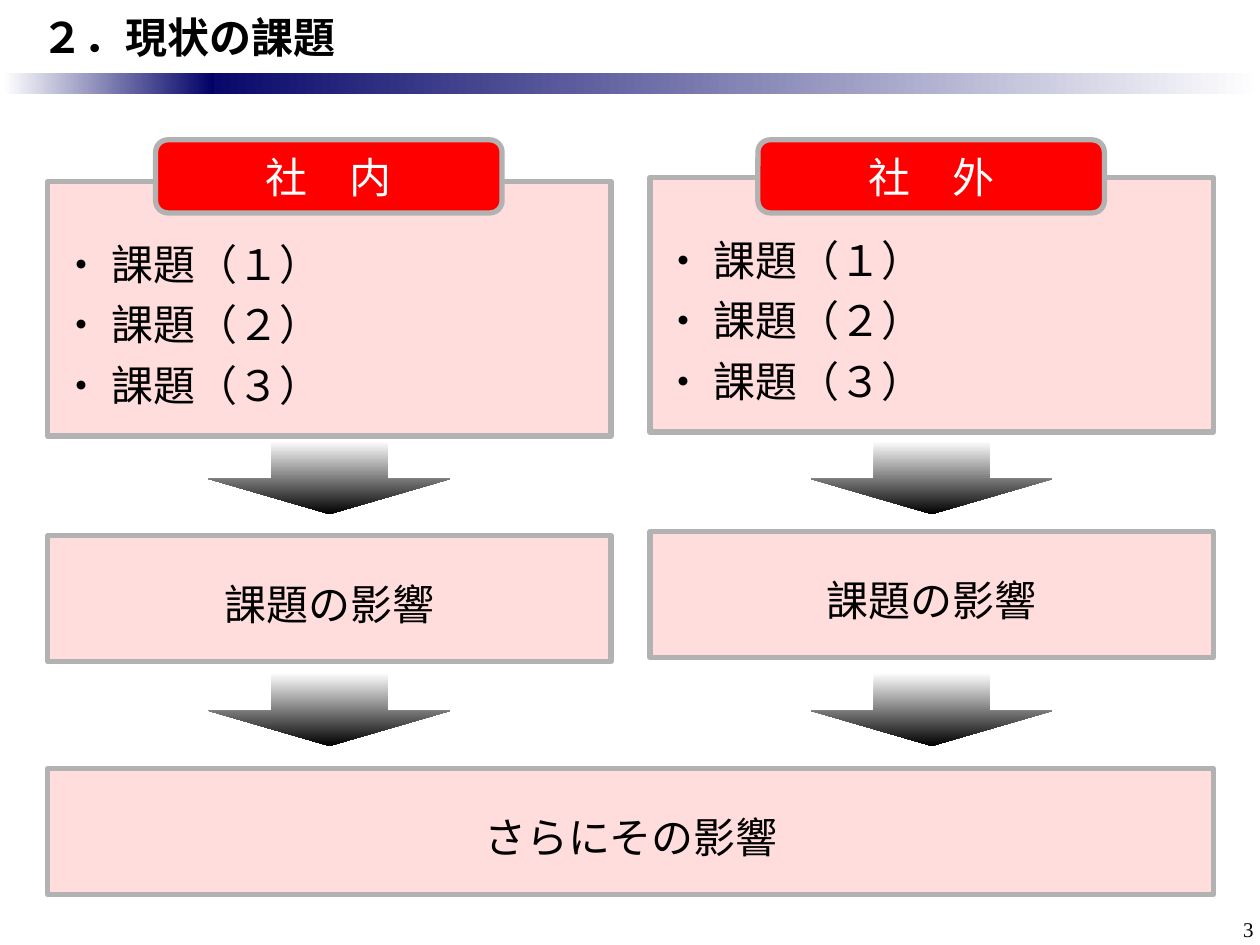
from lxml import etree
from pptx import Presentation
from pptx.dml.color import RGBColor
from pptx.enum.shapes import MSO_SHAPE
from pptx.enum.text import MSO_ANCHOR, PP_ALIGN
from pptx.oxml.ns import qn
from pptx.util import Inches, Pt

RECT = MSO_SHAPE.RECTANGLE
ROUND = MSO_SHAPE.ROUNDED_RECTANGLE
ARROW = MSO_SHAPE.RIGHT_ARROW
TOP, MIDDLE = MSO_ANCHOR.TOP, MSO_ANCHOR.MIDDLE
LEFT, CENTER, RIGHT = PP_ALIGN.LEFT, PP_ALIGN.CENTER, PP_ALIGN.RIGHT
GOTHIC, SERIF = "Noto Sans CJK JP", "Times New Roman"
PINK, RED, GRAY = "FFDDDD", "FF0000", "B2B2B2"
NAVY, WHITE, BLACK = "000066", "FFFFFF", "000000"
WIDE, TALL = 4.47, 2.02


def tint(color, code):
    """Set a colour from a hex string."""
    color.rgb = RGBColor.from_string(code)


def write(shape, text, align=CENTER, anchor=MIDDLE, inset=(0.1, 0.05, 0.1, 0.05),
          size=24, font=GOTHIC, code=BLACK, bold=False, space=1.0):
    """Put formatted text into a shape."""
    frame = shape.text_frame
    frame.text = text
    frame.word_wrap = True
    frame.vertical_anchor = anchor
    (frame.margin_left, frame.margin_top,
     frame.margin_right, frame.margin_bottom) = map(Inches, inset)
    for para in frame.paragraphs:
        para.alignment = align
        para.line_spacing = space
        para.space_before = Pt(0)
        for run in para.runs:
            run.font.size = Pt(size)
            run.font.name = font
            run.font.bold = bold
            tint(run.font.color, code)
            east = etree.SubElement(run.font._element, qn("a:ea"))
            east.set("typeface", font)


def draw(slide, kind, box):
    """Add a plain preset shape in a box."""
    shape = slide.shapes.add_shape(kind, *map(Inches, box))
    shape.shadow.inherit = False
    return shape


def panel(slide, box, text, kind=RECT, fill=PINK, **style):
    """Add a filled, gray-edged box with text."""
    shape = draw(slide, kind, box)
    shape.fill.solid()
    tint(shape.fill.fore_color, fill)
    tint(shape.line.color, GRAY)
    shape.line.width = Pt(3)
    write(shape, text, **style)


def fade(slide, kind, box, start, end):
    """Add an edgeless shape with a gradient along its length."""
    shape = draw(slide, kind, box)
    shape.line.fill.background()
    shape.fill.gradient()
    shape.fill.gradient_angle = 0
    for stop, code in zip(shape.fill.gradient_stops, (start, end)):
        tint(stop.color, code)
    return shape


def arrow(slide, mid, top):
    """Add a broad arrow pointing down from a top centre point."""
    long, broad = 0.58, 1.92
    box = (mid - long / 2, top + (long - broad) / 2, long, broad)
    shape = fade(slide, ARROW, box, WHITE, BLACK)
    shape.rotation = 90
    shape.adjustments[0] = 0.48
    shape.adjustments[1] = 0.48


def header(slide, box):
    """Place the title and the bar below it."""
    left, top, width, height = box
    fade(slide, RECT, (left + 1.42, top + height, width - 1.42, 0.17), NAVY, WHITE)
    fade(slide, RECT, (left + 0.03, top + height, 1.67, 0.17), WHITE, NAVY)
    title = slide.shapes.title
    title.left, title.top, title.width, title.height = map(Inches, box)
    write(title, "２．現状の課題", LEFT, inset=(0.33, 0.05, 0.1, 0.05), bold=True)


def column(slide, left, top, name, lift):
    """Place one column of issues and effect under its label."""
    mid = left + WIDE / 2
    issues = "\n".join(f"・ 課題（{n}）" for n in "１２３")
    panel(slide, (left, top + 0.33 - lift, WIDE, TALL), issues, align=LEFT,
          anchor=TOP, inset=(0.1, 0.37, 0.06, 0.05), space=1.2)
    panel(slide, (mid - 1.38, top, 2.75, 0.58), name, ROUND, RED, code=WHITE)
    arrow(slide, mid, top + 2.39)
    panel(slide, (left, top + 3.14 - lift, WIDE, 1), "課題の影響", space=1.2)
    arrow(slide, mid, top + 4.23)


def footer(slide, box):
    """Place the page number."""
    text = slide.shapes.add_textbox(*map(Inches, box))
    write(text, "3", RIGHT, inset=(0.05, 0.02, 0.05, 0.02), size=12, font=SERIF)


def main():
    """Build and save the slide."""
    deck = Presentation()
    deck.slide_width, deck.slide_height = Inches(10), Inches(7.5)
    slide = deck.slides.add_slide(deck.slide_layouts[5])
    header(slide, (0, 0, 10, 0.58))
    column(slide, 0.38, 1.11, "社　内", 0)
    column(slide, 5.16, 1.11, "社　外", 0.03)
    panel(slide, (0.38, 6.1, 9.25, 1), "さらにその影響", space=1.2)
    footer(slide, (9.42, 7.25, 0.58, 0.25))
    deck.save("out.pptx")


if __name__ == "__main__":
    main()
